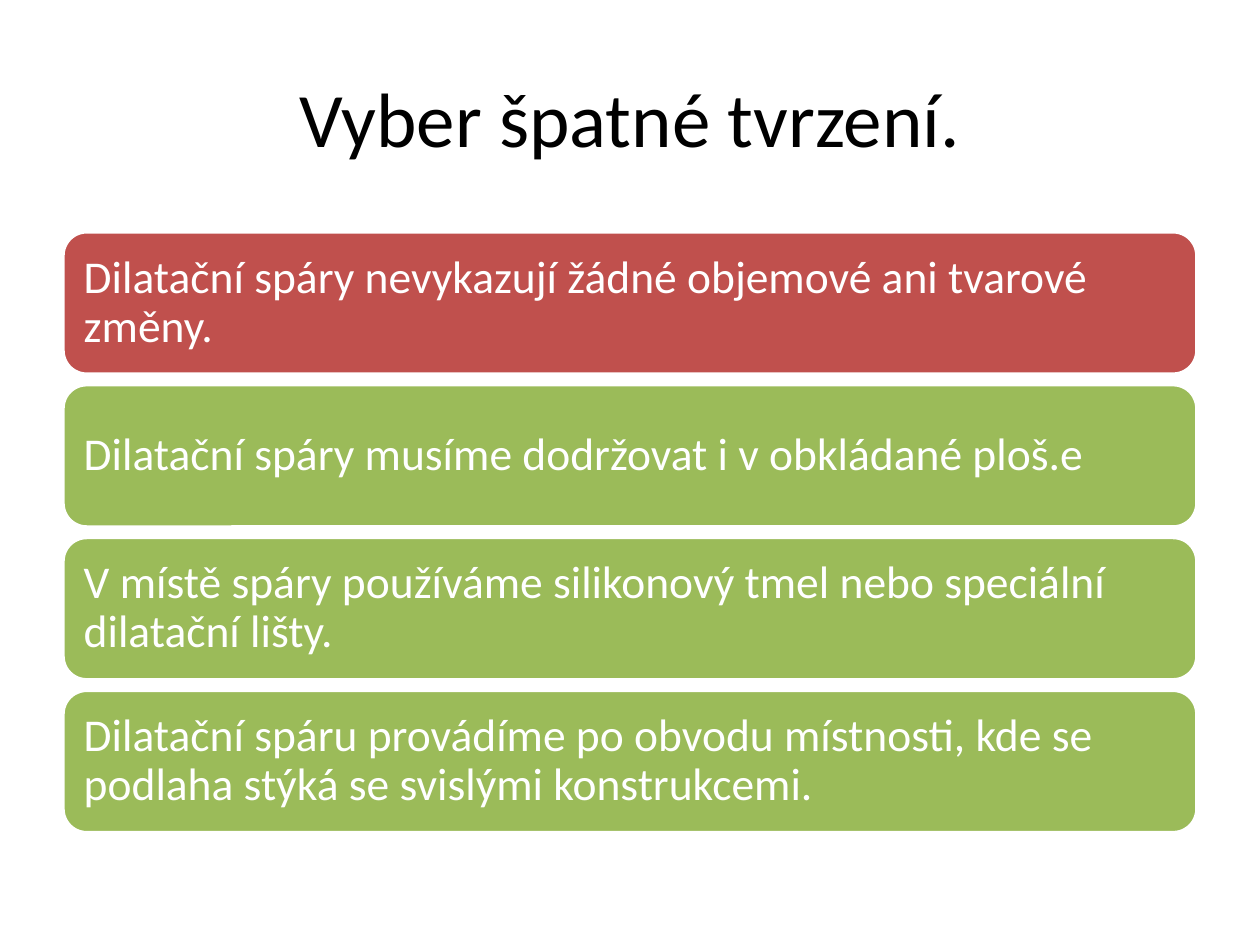
"""Build a quiz slide with one wrong and three correct statements."""
from pptx import Presentation
from pptx.dml.color import RGBColor
from pptx.enum.shapes import MSO_SHAPE as Shape
from pptx.enum.text import MSO_ANCHOR as Anchor, PP_ALIGN as Align
from pptx.util import Inches, Pt

COLORS = {"wrong": "C0504D", "correct": "9BBB59", "white": "FFFFFF", "black": "000000"}
TITLE = "Vyber špatné tvrzení."
STATEMENTS = [
    ("Dilatační spáry nevykazují žádné objemové ani tvarové změny.", "wrong"),
    ("Dilatační spáry musíme dodržovat i v obkládané ploš.e", "correct"),
    ("V místě spáry používáme silikonový tmel nebo speciální dilatační lišty.", "correct"),
    ("Dilatační spáru provádíme po obvodu místnosti, kde se podlaha stýká se svislými konstrukcemi.", "correct"),
]
LEFT, WIDTH = 0.5, 9
TITLE_TOP, TITLE_HEIGHT = 0.3, 1.25
BAR_TOP, BAR_HEIGHT, BAR_STEP = 1.84, 1.13, 1.213
TITLE_FORMAT = {"size": Pt(44), "name": "Calibri"}
BAR_FORMAT = {"size": Pt(26), "name": "Calibri"}
BAR_MARGINS = {f"margin_{side}": Inches(0.11) for side in ("left", "top", "right", "bottom")}


def color(name):
    return RGBColor.from_string(COLORS[name])


def set_attributes(target, values):
    for name, value in values.items():
        setattr(target, name, value)


def write_text(shape, text, font_format, font_color, paragraph_format, frame_format):
    frame = shape.text_frame
    set_attributes(frame, {"word_wrap": True, "vertical_anchor": Anchor.MIDDLE, **frame_format})
    paragraph = frame.paragraphs[0]
    set_attributes(paragraph, paragraph_format)
    run = paragraph.add_run()
    run.text = text
    set_attributes(run.font, font_format)
    run.font.color.rgb = color(font_color)


def add_title(slide):
    box = slide.shapes.add_textbox(*map(Inches, (LEFT, TITLE_TOP, WIDTH, TITLE_HEIGHT)))
    write_text(box, TITLE, TITLE_FORMAT, "black", {"alignment": Align.CENTER}, {})


def add_bar(slide, index, text, kind):
    top = BAR_TOP + index * BAR_STEP
    bar = slide.shapes.add_shape(Shape.ROUNDED_RECTANGLE, *map(Inches, (LEFT, top, WIDTH, BAR_HEIGHT)))
    bar.shadow.inherit = False
    bar.fill.solid()
    bar.fill.fore_color.rgb = color(kind)
    bar.line.color.rgb = color("white")
    bar.line.width = Pt(2)
    write_text(bar, text, BAR_FORMAT, "white", {"alignment": Align.LEFT, "line_spacing": 0.9}, BAR_MARGINS)


def main():
    presentation = Presentation()
    presentation.slide_width, presentation.slide_height = Inches(10), Inches(7.5)
    slide = presentation.slides.add_slide(presentation.slide_layouts[6])
    add_title(slide)
    for index, (text, kind) in enumerate(STATEMENTS):
        add_bar(slide, index, text, kind)
    presentation.save("out.pptx")


if __name__ == "__main__":
    main()
